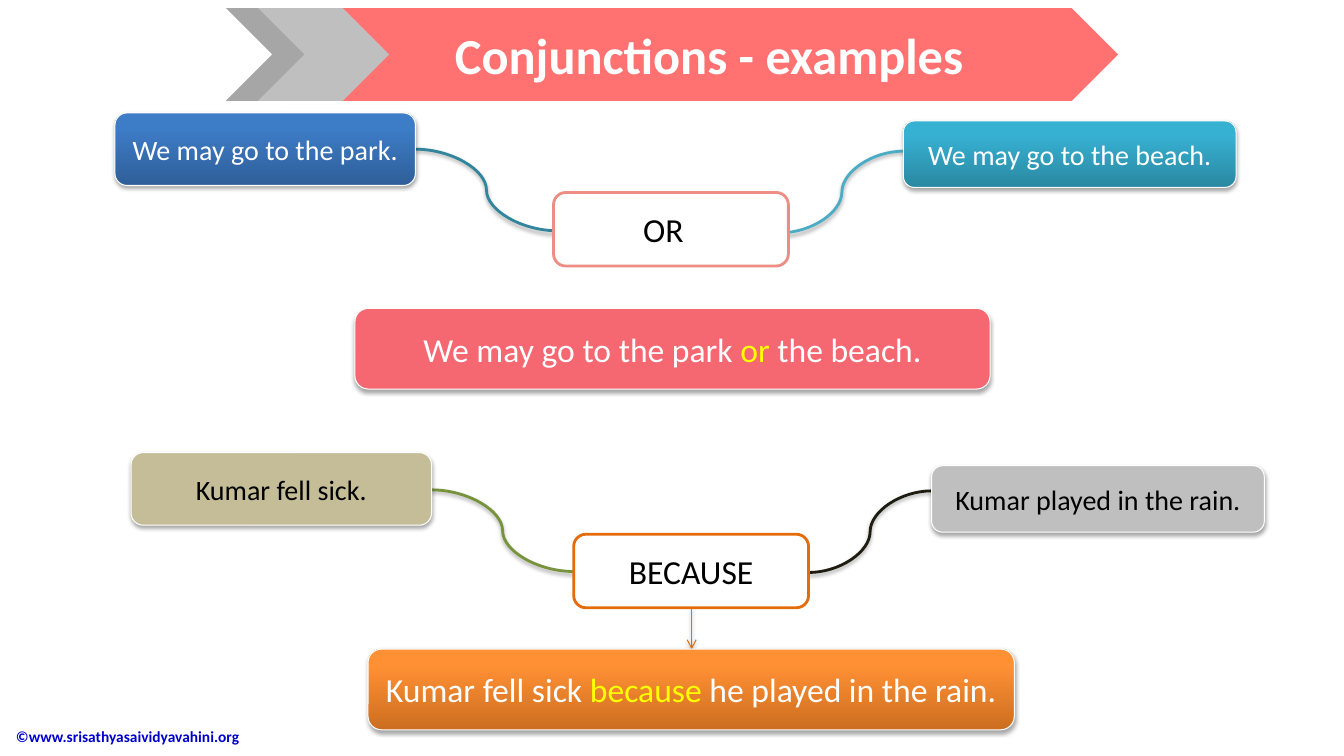
"""Build the slide of conjunction examples."""
from lxml.etree import SubElement as Sub
from pptx import Presentation
from pptx.dml.color import RGBColor as Rgb
from pptx.enum.shapes import MSO_CONNECTOR as Link, MSO_SHAPE as Form
from pptx.enum.text import MSO_ANCHOR as Anchor, PP_ALIGN as Align
from pptx.oxml.ns import qn
from pptx.util import Inches, Pt

HUE = {
    "white": "FFFFFF", "black": "000000", "yellow": "FFFF00", "navy": "0000CC",
    "blue": "3D7CC7", "deep blue": "2F5F99", "aqua": "37B1D2", "deep aqua": "2A88A2",
    "orange": "FF9034", "burnt": "CC6E20", "rust": "E46C0A", "rose": "F56771",
    "blush": "ED8D83", "coral": "FF7271", "tan": "C4BD97", "silver": "BFBFBF",
    "gray": "A6A6A6", "teal": "31859C", "sky": "4BACC6", "olive": "77933C", "ink": "1E1C11",
}
TITLE = "Conjunctions - examples"
CREDIT = "©www.srisathyasaividyavahini.org"
BANNER = [
    (Form.CHEVRON, 2.24, 1.3, "gray"),
    (Form.PENTAGON, 3.21, 7.88, "coral"),
    (Form.CHEVRON, 2.56, 1.3, "silver"),
]
TOP, TALL = 0.08, 0.92
CURVES = [
    (4.12, 1.48, 5.53, 2.29, "teal"),
    (7.74, 2.31, 8.96, 1.5, "sky"),
    (4.28, 4.86, 5.69, 5.67, "olive"),
    (8.02, 5.68, 9.24, 4.87, "ink"),
]
ARROW = (6.86, 6.03, 6.86, 6.44, "rust")
CLAUSES = [
    ((1.14, 1.12, 2.98, 0.72), ("deep blue", "blue"), "white", "We may go to the park."),
    ((8.96, 1.2, 3.3, 0.66), ("deep aqua", "aqua"), "white", "We may go to the beach."),
    ((1.3, 4.49, 2.98, 0.72), ("tan",), "black", "Kumar fell sick."),
    ((9.24, 4.62, 3.3, 0.66), ("silver",), "black", "Kumar played in the rain."),
]
RESULTS = [
    ((3.52, 3.06, 6.3, 0.8), ("rose",),
     ("We may go to the park ", "or", " the beach.")),
    ((3.65, 6.44, 6.41, 0.8), ("burnt", "orange"),
     ("Kumar fell sick ", "because", " he played in the rain.")),
]
JOINERS = [
    ((5.49, 1.91, 2.33, 0.73), "blush", "OR", 0.25),
    ((5.69, 5.3, 2.33, 0.73), "rust", "BECAUSE", 0.1),
]


def color(name):
    return Rgb.from_string(HUE[name])


def write(shape, *parts, size=20, hues=("white",), bold=False, align=Align.CENTER, right=0.1):
    frame = shape.text_frame
    frame.word_wrap = True
    frame.vertical_anchor = Anchor.MIDDLE
    frame.margin_left, frame.margin_right = Inches(0.1), Inches(right)
    frame.margin_top = frame.margin_bottom = Inches(0.05)
    para = frame.paragraphs[0]
    para.alignment = align
    for part, hue in zip(parts, hues):
        run = para.add_run()
        run.text = part
        font = run.font
        font.name, font.size, font.bold = "Calibri", Pt(size), bold
        font.color.rgb = color(hue)


def shade(props, on=True):
    for old in props.findall(qn("a:effectLst")):
        props.remove(old)
    effects = Sub(props, qn("a:effectLst"))
    if on:
        cast = Sub(effects, qn("a:outerShdw"), blurRad=str(Pt(3.1)), dist=str(Pt(1.8)),
                   dir="5400000", rotWithShape="0")
        tone = Sub(cast, qn("a:srgbClr"), val=HUE["black"])
        Sub(tone, qn("a:alpha"), val="35000")


def block(slide, form, place, fills, edge=None, width=0.75, cast=False):
    shape = slide.shapes.add_shape(form, *map(Inches, place))
    shape.shadow.inherit = False
    if len(fills) == 1:
        shape.fill.solid()
        shape.fill.fore_color.rgb = color(fills[0])
    else:
        shape.fill.gradient()
        shape.fill.gradient_angle = 90
        for stop, spot, hue in zip(shape.fill.gradient_stops, (0, 0.8), fills):
            stop.position = spot
            stop.color.rgb = color(hue)
    if edge:
        shape.line.color.rgb = color(edge)
        shape.line.width = Pt(width)
    else:
        shape.line.fill.background()
    shade(shape._element.spPr, cast)
    return shape


def join(slide, kind, ends, hue, width, head=False):
    line = slide.shapes.add_connector(kind, *map(Inches, ends))
    line.line.color.rgb = color(hue)
    line.line.width = Pt(width)
    if head:
        Sub(line.line._get_or_add_ln(), qn("a:tailEnd"), type="arrow")
    shade(line._element.spPr)


def main():
    deck = Presentation()
    deck.slide_width, deck.slide_height = Inches(13.33), Inches(7.5)
    slide = deck.slides.add_slide(deck.slide_layouts[5])

    credit = slide.shapes.add_textbox(*map(Inches, (0.06, 7.11, 3.5, 0.39)))
    write(credit, CREDIT, size=11, hues=("navy",), bold=True, align=Align.LEFT)

    for *ends, hue in CURVES:
        join(slide, Link.CURVE, ends, hue, 2)
    *ends, hue = ARROW
    join(slide, Link.STRAIGHT, ends, hue, 0.75, head=True)

    box = Form.ROUNDED_RECTANGLE
    for place, fills, ink, text in CLAUSES:
        write(block(slide, box, place, fills, "white", cast=True), text, hues=(ink,))
    for place, fills, parts in RESULTS:
        write(block(slide, box, place, fills, "white", cast=True), *parts,
              size=24, hues=("white", "yellow", "white"))
    for place, edge, text, right in JOINERS:
        write(block(slide, box, place, ("white",), edge, 2), text,
              size=24, hues=("black",), right=right)

    for form, left, wide, hue in BANNER:
        block(slide, form, (left, TOP, wide, TALL), (hue,))
    title = slide.shapes.title
    title.left, title.top = Inches(3.21), Inches(TOP)
    title.width, title.height = Inches(7.65), Inches(TALL)
    write(title, TITLE, size=36, bold=True)
    slide.shapes._spTree.append(title._element)

    deck.save("out.pptx")


if __name__ == "__main__":
    main()
